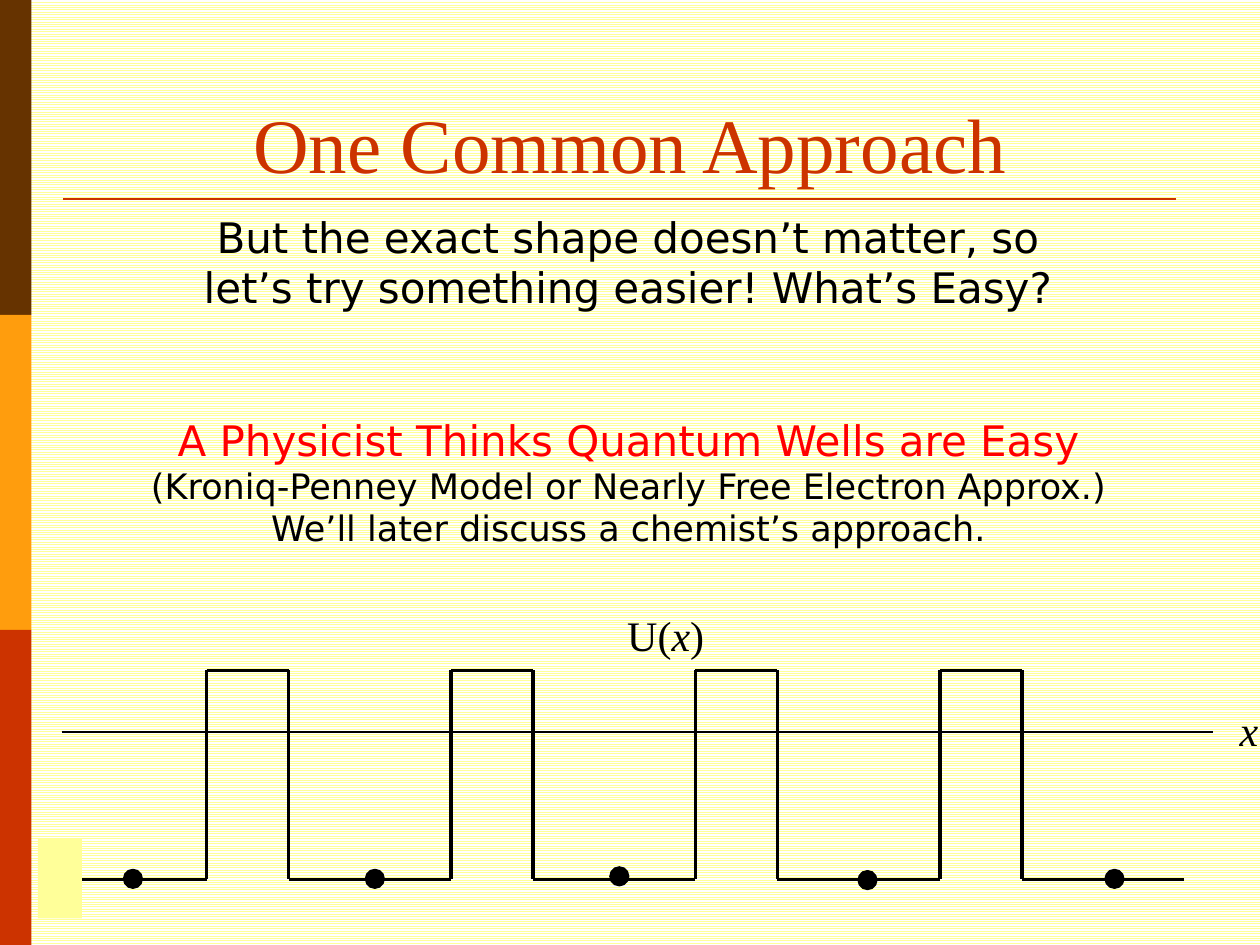
from pptx import Presentation
from pptx.dml.color import RGBColor as RGB
from pptx.enum.dml import MSO_PATTERN as Pat
from pptx.enum.shapes import MSO_CONNECTOR as Con, MSO_SHAPE as Shp
from pptx.enum.text import MSO_ANCHOR as Anc, MSO_AUTO_SIZE as Fit, PP_ALIGN as Al
from pptx.oxml.ns import qn
from pptx.util import Inches, Pt
from lxml.etree import SubElement as Sub

THEME = {
    "serif": "Times New Roman", "sans": "DejaVu Sans",
    "head": 44, "big": 24, "mid": 20,
    "brown": "663300", "amber": "FF9D0D", "rust": "CC3300",
    "pale": "FFFF99", "white": "FFFFFF", "black": "000000", "red": "FF0000",
}

TITLE = "One Common Approach"
BANDS = ["brown", "amber", "rust"]
NOTES = [
    ((1.25, 1.63, 7.47, 0.91), "sans", Al.CENTER, [
        [("But the exact shape doesn’t matter, so let’s try something easier! What’s Easy?",
          "big", "black", False)]]),
    ((0.77, 3.24, 8.44, 1.18), "sans", Al.CENTER, [
        [("A Physicist Thinks Quantum Wells are Easy ", "big", "red", False),
         ("(Kroniq-Penney Model or Nearly Free Electron Approx.)", "mid", "black", False)],
        [("We’ll later discuss a chemist’s approach.", "mid", "black", False)]]),
    ((4.88, 4.79, 1.07, 0.5), "serif", Al.LEFT, [
        [("U(", "big", "black", False), ("x", "big", "black", True),
         (")", "big", "black", False)]]),
    ((9.74, 5.54, 0.46, 0.5), "serif", Al.LEFT, [
        [("x", "big", "black", True)]]),
]
WELL = {"left": 0.35, "floor": 1.29, "wall": 0.65, "top": 5.32, "base": 6.98, "count": 4}
ATOMS = [(0.98, 6.9), (2.9, 6.9), (4.84, 6.88), (6.81, 6.91), (8.77, 6.9)]
DOT = 0.15


def tint(name):
    return RGB.from_string(THEME[name])


def style(font, face, size, color):
    font.name = THEME[face]
    font.size = Pt(THEME[size])
    font.color.rgb = tint(color)


def block(kind, box, color, edge=0):
    shape = slide.shapes.add_shape(kind, *map(Inches, box))
    shape.shadow.inherit = False
    shape.fill.solid()
    shape.fill.fore_color.rgb = tint(color)
    if edge:
        shape.line.color.rgb = tint(color)
        shape.line.width = Pt(edge)
    else:
        shape.line.fill.background()


def rule(start, end, color, width):
    line = slide.shapes.add_connector(Con.STRAIGHT, *map(Inches, start + end))
    line.line.color.rgb = tint(color)
    line.line.width = Pt(width)
    Sub(line._element.spPr, qn("a:effectLst"))


def note(box, face, align, paras):
    frame = slide.shapes.add_textbox(*map(Inches, box)).text_frame
    frame.word_wrap = True
    frame.auto_size = Fit.SHAPE_TO_FIT_TEXT
    for i, runs in enumerate(paras):
        para = frame.add_paragraph() if i else frame.paragraphs[0]
        para.alignment = align
        for text, size, color, slant in runs:
            run = para.add_run()
            run.text = text
            run.font.italic = slant
            style(run.font, face, size, color)


def wave():
    x, top, base = WELL["left"], WELL["top"], WELL["base"]
    points = [(x, base)]
    for _ in range(WELL["count"]):
        x += WELL["floor"]
        points += [(x, base), (x, top)]
        x += WELL["wall"]
        points += [(x, top), (x, base)]
    return points + [(x + WELL["floor"], base)]


deck = Presentation()
deck.slide_width, deck.slide_height = Inches(10), Inches(7.5)
slide = deck.slides.add_slide(deck.slide_layouts[5])
back = slide.background.fill
back.patterned()
back.pattern = Pat.NARROW_HORIZONTAL
back.fore_color.rgb = tint("pale")
back.back_color.rgb = tint("white")

for i, color in enumerate(BANDS):
    block(Shp.RECTANGLE, (0, 2.5 * i, 0.25, 2.5), color)
rule((0.5, 1.58), (9.33, 1.58), "rust", 1.5)

title = slide.shapes.title
title.left, title.top, title.width, title.height = map(Inches, (0.5, 0.3, 9, 1.25))
frame = title.text_frame
frame.text = TITLE
frame.auto_size = Fit.NONE
frame.vertical_anchor = Anc.BOTTOM
head = frame.paragraphs[0]
head.alignment = Al.CENTER
style(head.font, "serif", "head", "rust")

points = wave()
for start, end in zip(points, points[1:]):
    rule(start, end, "black", 2)
for x, y in ATOMS:
    block(Shp.OVAL, (x, y, DOT, DOT), "black", 0.75)
rule((0.49, 5.81), (9.63, 5.81), "black", 0.75)
block(Shp.RECTANGLE, (0.3, 6.66, 0.35, 0.63), "pale")
for item in NOTES:
    note(*item)

deck.save("out.pptx")
